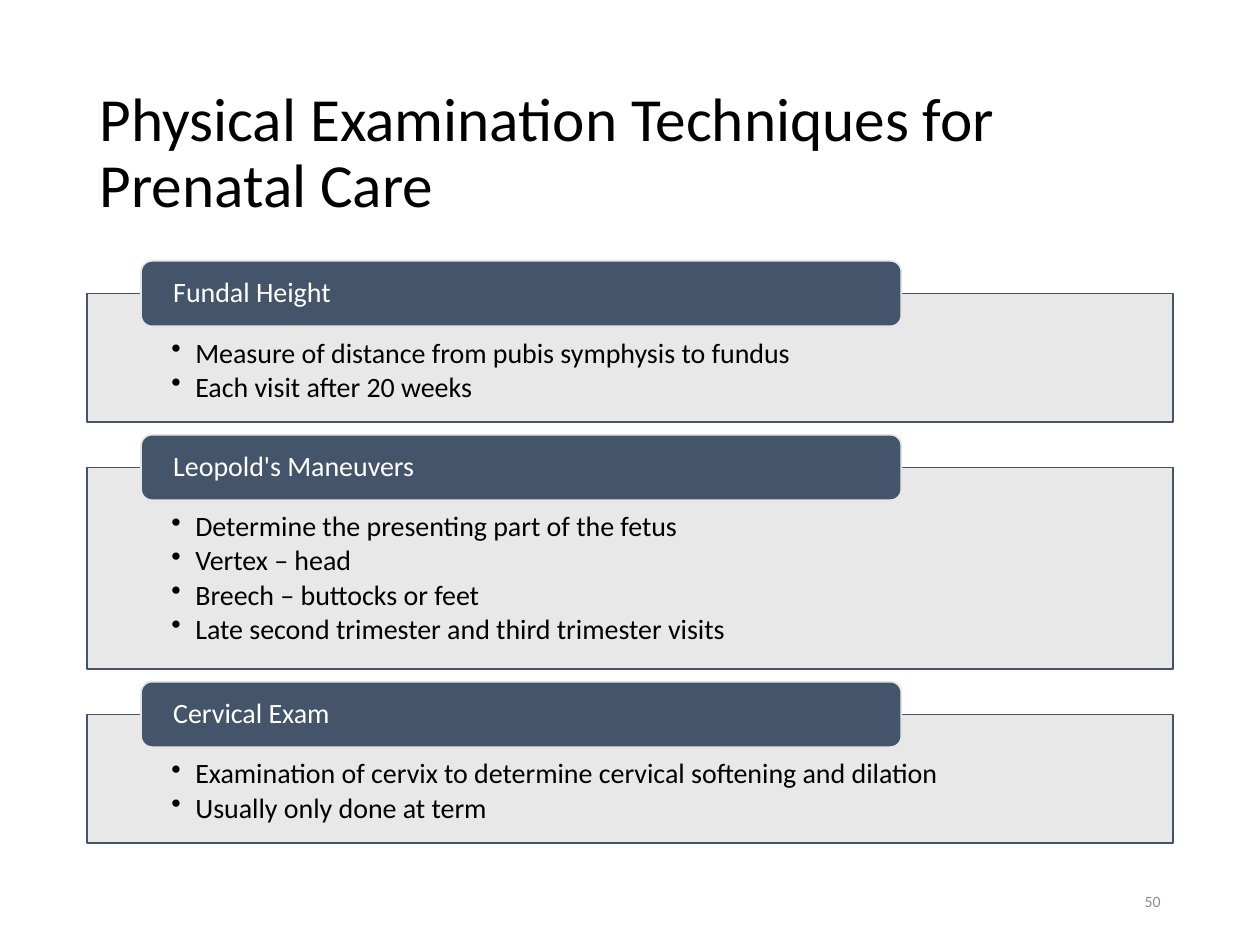
import pptx
import pptx.dml.color
import pptx.enum.shapes
import pptx.enum.text
import pptx.oxml
import pptx.oxml.ns
import pptx.util
from lxml import etree

Inches = pptx.util.Inches
Pt = pptx.util.Pt
ALIGN = pptx.enum.text.PP_ALIGN
ANCHOR = pptx.enum.text.MSO_ANCHOR
SHAPE = pptx.enum.shapes.MSO_SHAPE

COLORS = {"ink": "000000", "white": "FFFFFF", "slate": "44546A",
          "mist": "E7E6E6", "number": "8C8C8C"}
FONT = "Calibri"

LEFT, WIDTH = 0.69, 8.62
TAB_HEIGHT = 0.52
SECTION_TOP, SECTION_GAP = 2.07, 0.1
PANEL_BASE, LINE_PITCH = 0.44, 0.29

SECTIONS = [
    ("Fundal Height",
     ["Measure of distance from pubis symphysis to fundus",
      "Each visit after 20 weeks"]),
    ("Leopold's Maneuvers",
     ["Determine the presenting part of the fetus",
      "Vertex – head",
      "Breech – buttocks or feet",
      "Late second trimester and third trimester visits"]),
    ("Cervical Exam",
     ["Examination of cervix to determine cervical softening and dilation",
      "Usually only done at term"]),
]


def color(name):
    return pptx.dml.color.RGBColor.from_string(COLORS[name])


def add_bullet(paragraph):
    properties = paragraph._p.get_or_add_pPr()
    properties.set("marL", str(Inches(0.19)))
    properties.set("indent", str(-Inches(0.19)))
    bullet = etree.SubElement(properties, pptx.oxml.ns.qn("a:buChar"))
    bullet.set("char", "•")


def write(shape, lines, size=16, ink="ink", align=ALIGN.LEFT,
          anchor=ANCHOR.MIDDLE, insets=(0.1, 0.05, 0.1, 0.05),
          spacing=0.9, after=0, bullets=False):
    """Fill a shape with one paragraph per line; insets are left, top, right, bottom."""
    frame = shape.text_frame
    frame.text = "\n".join(lines)
    frame.word_wrap = True
    frame.auto_size = pptx.enum.text.MSO_AUTO_SIZE.NONE
    frame.vertical_anchor = anchor
    (frame.margin_left, frame.margin_top,
     frame.margin_right, frame.margin_bottom) = map(Inches, insets)
    for paragraph in frame.paragraphs:
        paragraph.alignment = align
        paragraph.line_spacing = spacing
        paragraph.space_before = Pt(0)
        paragraph.space_after = Pt(after)
        if bullets:
            add_bullet(paragraph)
        for run in paragraph.runs:
            run.font.name = FONT
            run.font.size = Pt(size)
            run.font.color.rgb = color(ink)


def add_block(slide, kind, box, fill, line, opacity=None):
    block = slide.shapes.add_shape(kind, *map(Inches, box))
    block.shadow.inherit = False
    block.fill.solid()
    block.fill.fore_color.rgb = color(fill)
    block.line.color.rgb = color(line)
    block.line.width = Pt(1)
    if opacity is not None:
        fill_color = block._element.spPr.find(
            pptx.oxml.ns.qn("a:solidFill") + "/" + pptx.oxml.ns.qn("a:srgbClr"))
        alpha = etree.SubElement(fill_color, pptx.oxml.ns.qn("a:alpha"))
        alpha.set("val", str(opacity * 1000))
    return block


def place_title(slide, box, text):
    title = slide.shapes.title
    title.left, title.top, title.width, title.height = map(Inches, box)
    write(title, [text], size=35)


def place_section(slide, box, heading, points):
    """Panel of points with a heading tab centred on its top edge."""
    left, top, width, height = box
    panel_drop = TAB_HEIGHT / 2
    panel = add_block(slide, SHAPE.RECTANGLE,
                      (left, top + panel_drop, width, height - panel_drop),
                      "mist", "slate", opacity=90)
    write(panel, points, anchor=ANCHOR.TOP, insets=(0.67, 0.36, 0.67, 0.12),
          after=2.2, bullets=True)
    tab = add_block(slide, SHAPE.ROUNDED_RECTANGLE,
                    (left + 0.43, top, width * 0.7, TAB_HEIGHT), "slate", "mist")
    write(tab, [heading], ink="white", insets=(0.23, 0, 0.23, 0))


def place_number(slide, box, number):
    page_number = slide.shapes.add_textbox(*map(Inches, box))
    write(page_number, [number], size=9, ink="number", align=ALIGN.RIGHT,
          spacing=1.0)


def main():
    deck = pptx.Presentation()
    deck.slide_width, deck.slide_height = Inches(10), Inches(7.5)
    slide = deck.slides.add_slide(deck.slide_layouts[5])

    # Title
    place_title(slide, (LEFT, 0.61, WIDTH, 1.24),
                "Physical Examination Techniques for Prenatal Care")

    # Examination techniques, stacked with equal gaps
    top = SECTION_TOP
    for heading, points in SECTIONS:
        height = TAB_HEIGHT / 2 + PANEL_BASE + LINE_PITCH * len(points)
        place_section(slide, (LEFT, top, WIDTH, height), heading, points)
        top += height + SECTION_GAP

    # Slide number
    place_number(slide, (7.06, 6.95, 2.25, 0.4), "50")

    deck.save("out.pptx")


if __name__ == "__main__":
    main()
